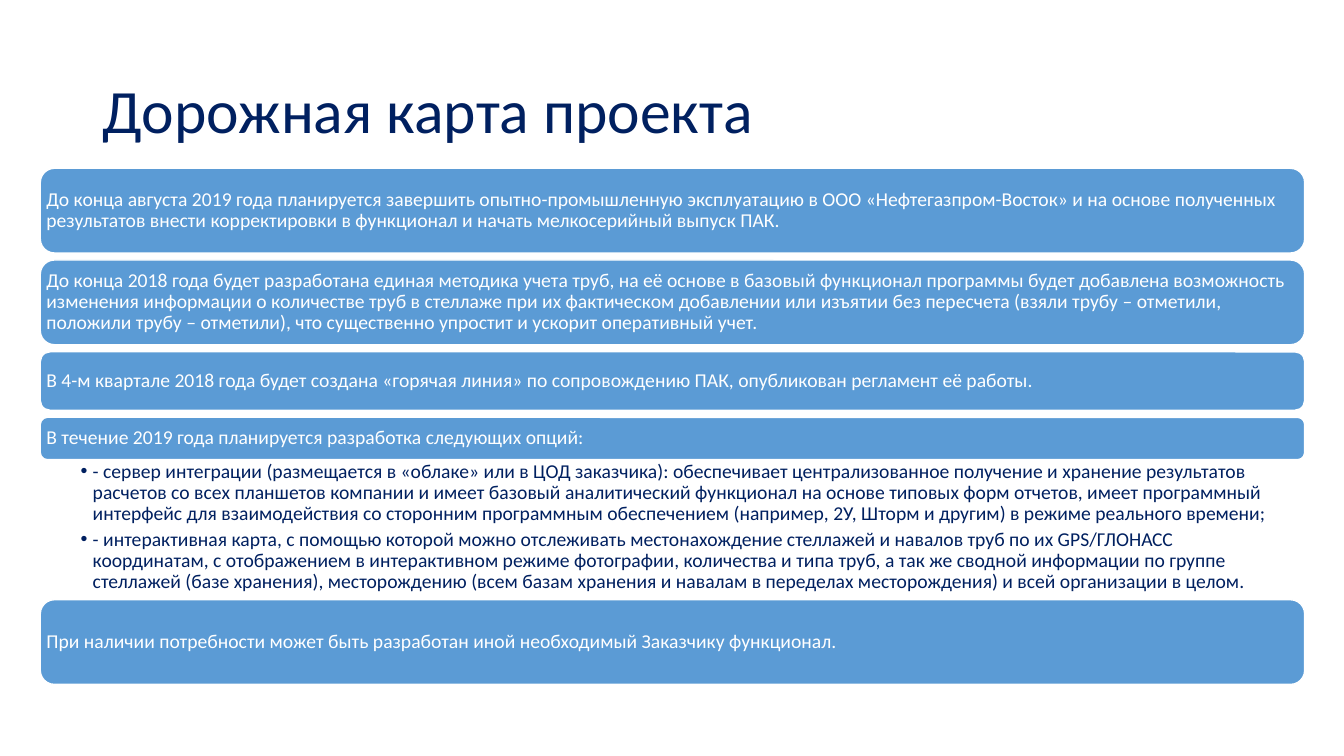
from lxml.etree import SubElement
from pptx import Presentation
from pptx.dml.color import RGBColor
from pptx.enum.shapes import MSO_SHAPE
from pptx.enum.text import MSO_ANCHOR, PP_ALIGN
from pptx.oxml.ns import qn
from pptx.util import Inches, Pt

NAVY, BLUE, WHITE = "002060", "5B9BD5", "FFFFFF"
LEFT, WIDTH, GAP = 0.4, 12.54, 0.07
PAD = 0.06
CURVE = 0.29 / 6

STEPS = [
    (0.84, "До конца августа 2019 года планируется завершить опытно-промышленную эксплуатацию в ООО «Нефтегазпром-Восток» и на основе полученных результатов внести корректировки в функционал и начать мелкосерийный выпуск ПАК."),
    (0.84, "До конца 2018 года будет разработана единая методика учета труб, на её основе в базовый функционал программы будет добавлена возможность изменения информации о количестве труб в стеллаже при их фактическом добавлении или изъятии без пересчета (взяли трубу – отметили, положили трубу – отметили), что существенно упростит и ускорит оперативный учет."),
    (0.58, "В 4-м квартале 2018 года будет создана «горячая линия» по сопровождению ПАК, опубликован регламент её работы."),
    (0.42, "В течение 2019 года планируется разработка следующих опций:"),
]
PLANS = [
    "- сервер интеграции (размещается в «облаке» или в ЦОД заказчика): обеспечивает централизованное получение и хранение результатов расчетов со всех планшетов компании и имеет базовый аналитический функционал на основе типовых форм отчетов, имеет программный интерфейс для взаимодействия со сторонним программным обеспечением (например, 2У, Шторм и другим) в режиме реального времени;",
    "- интерактивная карта, с помощью которой можно отслеживать местонахождение стеллажей и навалов труб по их GPS/ГЛОНАСС координатам, с отображением в интерактивном режиме фотографии, количества и типа труб, а так же сводной информации по группе стеллажей (базе хранения), месторождению (всем базам хранения и навалам в переделах месторождения) и всей организации в целом.",
]
LAST = (0.84, "При наличии потребности может быть разработан иной необходимый Заказчику функционал.")


def color(code):
    return RGBColor.from_string(code)


def apply(target, values):
    for name, value in values.items():
        setattr(target, name, value)


class Board:
    font = "Calibri"

    def __init__(self, deck):
        self.slide = deck.slides.add_slide(deck.slide_layouts[6])

    def fill_text(self, frame, lines, size, tint, pads, anchor=MSO_ANCHOR.MIDDLE, after=0, bullet=False):
        sides = ("margin_left", "margin_top", "margin_right", "margin_bottom")
        apply(frame, {"word_wrap": True, "vertical_anchor": anchor})
        apply(frame, dict(zip(sides, map(Inches, pads))))
        for index, line in enumerate(lines):
            para = frame.paragraphs[0] if index == 0 else frame.add_paragraph()
            para.text = line
            apply(para, {"line_spacing": 0.9, "space_after": Pt(after), "alignment": PP_ALIGN.LEFT})
            if bullet:
                self.mark(para)
            apply(para.font, {"name": self.font, "size": Pt(size)})
            para.font.color.rgb = color(tint)

    def mark(self, para):
        props = para._p.get_or_add_pPr()
        props.set("marL", str(Inches(0.12)))
        props.set("indent", str(-Inches(0.12)))
        SubElement(props, qn("a:buFont")).set("typeface", "Arial")
        SubElement(props, qn("a:buChar")).set("char", "•")

    def label(self, left, top, width, height, lines, **style):
        box = self.slide.shapes.add_textbox(*map(Inches, (left, top, width, height)))
        self.fill_text(box.text_frame, lines, **style)

    def card(self, top, height, text):
        area = map(Inches, (LEFT, top, WIDTH, height))
        shape = self.slide.shapes.add_shape(MSO_SHAPE.ROUNDED_RECTANGLE, *area)
        shape.shadow.inherit = False
        shape.fill.solid()
        shape.fill.fore_color.rgb = color(BLUE)
        shape.line.color.rgb = color(WHITE)
        shape.line.width = Pt(1)
        pad = PAD - CURVE * height
        self.fill_text(shape.text_frame, [text], size=14, tint=WHITE, pads=[pad] * 4)


def main():
    deck = Presentation()
    apply(deck, {"slide_width": Inches(13.33), "slide_height": Inches(7.5)})
    board = Board(deck)
    board.label(0.92, 0.4, 11.5, 1.45, ["Дорожная карта проекта"],
                size=44, tint=NAVY, pads=(0.1, 0.05, 0.1, 0.05))
    top = 1.67
    for height, text in STEPS:
        board.card(top, height, text)
        top += height + GAP
    top -= GAP
    depth = 1.39
    board.label(LEFT, top, WIDTH, depth, PLANS, size=14, tint=NAVY,
                pads=(0.4, 0.02, 0.11, 0.02), anchor=MSO_ANCHOR.TOP, after=2.8, bullet=True)
    board.card(top + depth, *LAST)
    deck.save("out.pptx")


if __name__ == "__main__":
    main()
